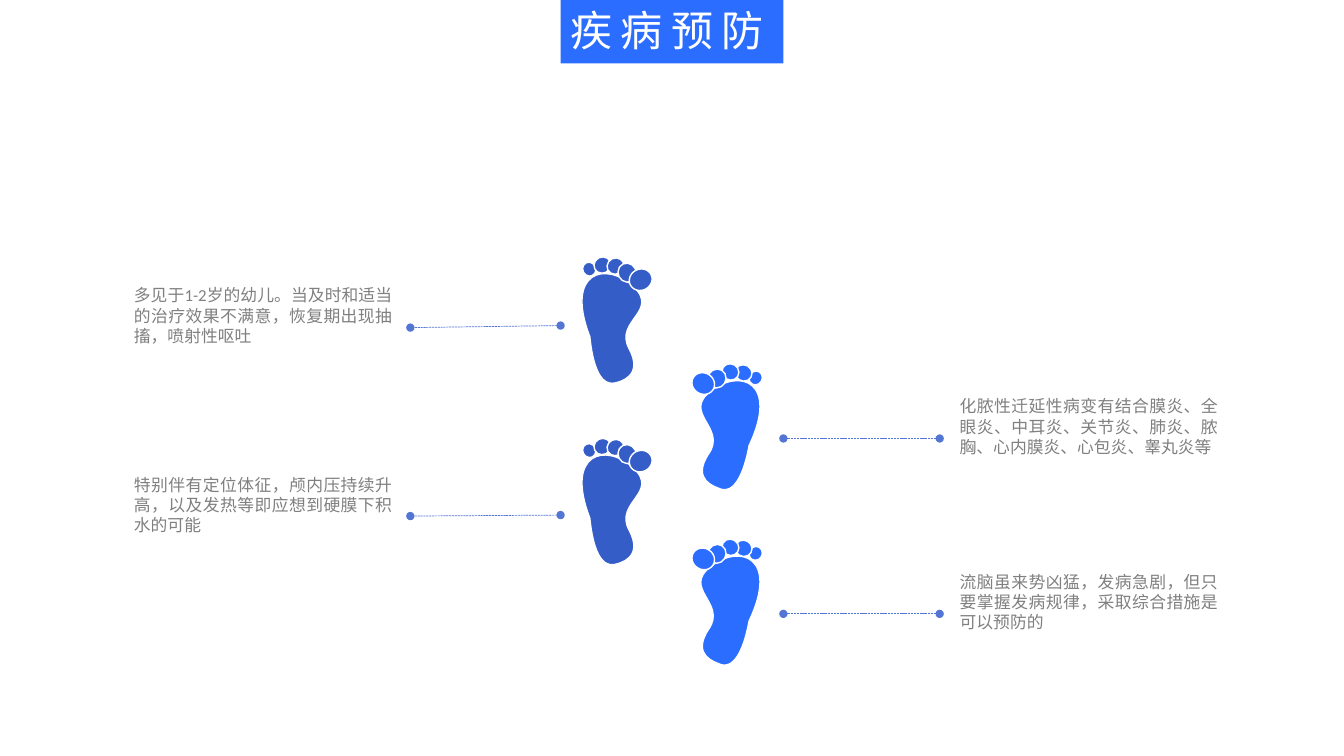
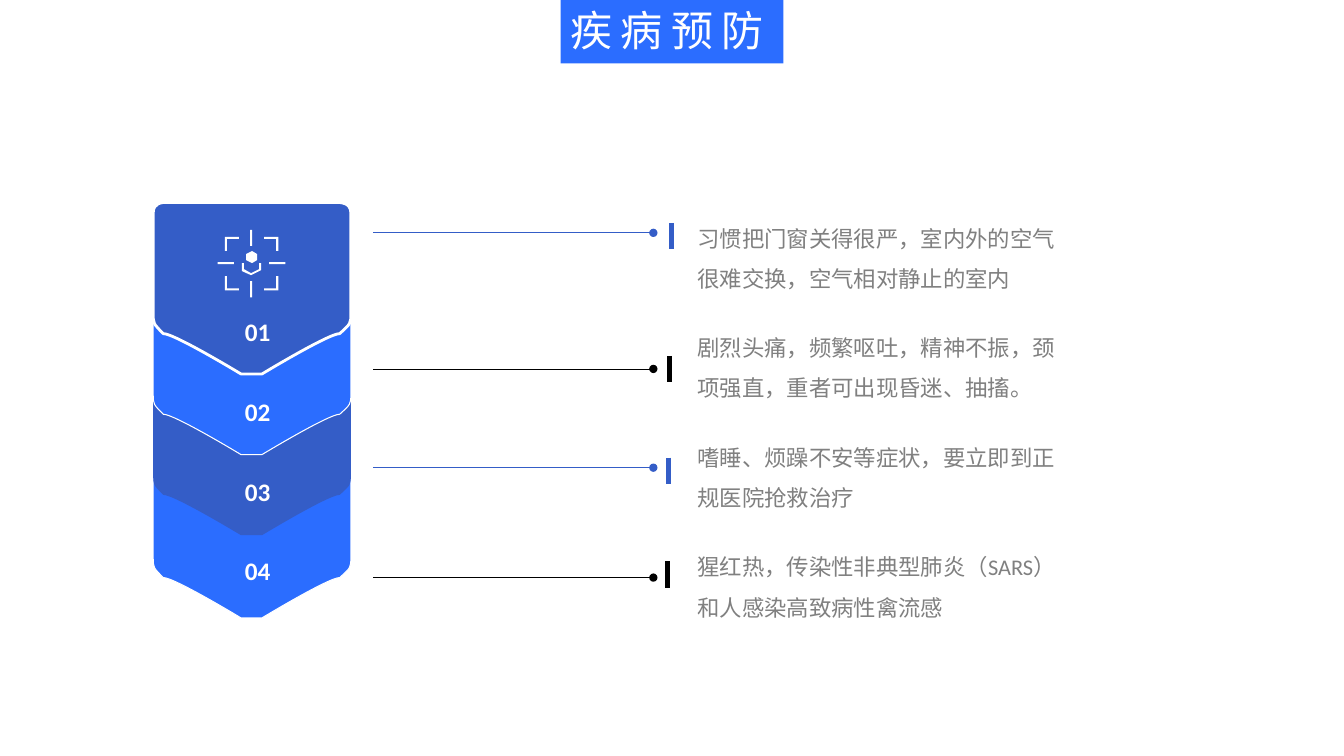
from dataclasses import dataclass
from itertools import product
from math import cos, radians, sin
from typing import Optional

from lxml.etree import SubElement
from pptx import Presentation
from pptx.dml.color import RGBColor
from pptx.enum.dml import MSO_LINE
from pptx.enum.shapes import MSO_CONNECTOR, MSO_SHAPE
from pptx.enum.text import MSO_ANCHOR, MSO_AUTO_SIZE, PP_ALIGN
from pptx.oxml.ns import qn
from pptx.util import Pt

# Shared look: 100 px to the inch
EMU_PER_PX = 9144
PAGE_WIDTH, PAGE_HEIGHT = 1333, 750
FONT = "Calibri"
BRIGHT = RGBColor(0x2B, 0x6D, 0xFF)
DEEP = RGBColor(0x34, 0x5D, 0xC7)
LINK = RGBColor(0x53, 0x76, 0xD5)
GREY = RGBColor(0x80, 0x80, 0x80)
WHITE = RGBColor(0xFF, 0xFF, 0xFF)
BLACK = RGBColor(0x00, 0x00, 0x00)

# An outline is a start point, then points (x, y) or curves (x1, y1, x2, y2, x, y)
Outline = list[tuple[float, ...]]
Frame = tuple[int, int, int, int]


@dataclass(frozen=True)
class Foot:
    sole: Outline
    frame: Frame
    toes: list[tuple[int, int]]
    rotation: float
    color: RGBColor
    step: int


@dataclass(frozen=True)
class Note:
    text: str
    left: int
    top: int
    start: tuple[int, int]
    end: tuple[int, int]


@dataclass(frozen=True)
class Stage:
    text: str
    top: int
    color: RGBColor
    border: float
    number_top: int
    text_top: int
    line_y: int
    bar: tuple[int, int]
    line_color: RGBColor


# Drawing helpers
def px(length: float) -> int:
    return round(length * EMU_PER_PX)


def paint(shape, fill: RGBColor, border: float = 0) -> None:
    shape.shadow.inherit = False
    shape.fill.solid()
    shape.fill.fore_color.rgb = fill
    if border:
        shape.line.color.rgb = WHITE
        shape.line.width = Pt(border)
    else:
        shape.line.fill.background()


def add_preset(page, kind, left: int, top: int, width: int, height: int,
               fill: RGBColor, border: float = 0):
    shape = page.shapes.add_shape(kind, px(left), px(top), px(width), px(height))
    paint(shape, fill, border)
    return shape


def pairs(part: tuple[float, ...]) -> list[tuple[float, float]]:
    return list(zip(part[::2], part[1::2]))


def move(outline: Outline, left: int, top: int) -> Outline:
    return [tuple(n for x, y in pairs(part) for n in (x + left, y + top))
            for part in outline]


def turn(outline: Outline, center: tuple[float, float], degrees: float) -> Outline:
    (cx, cy), angle = center, radians(degrees)
    return [tuple(n for x, y in pairs(part) for n in (
        cx + (x - cx) * cos(angle) - (y - cy) * sin(angle),
        cy + (x - cx) * sin(angle) + (y - cy) * cos(angle))) for part in outline]


def add_outline(page, outline: Outline, fill: RGBColor, border: float = 0,
                frame: Optional[Frame] = None):
    corners = [(px(part[-2]), px(part[-1])) for part in outline]
    builder = page.shapes.build_freeform(*corners[0])
    builder.add_line_segments(corners[1:], close=True)
    shape = builder.convert_to_shape()
    if frame:
        shape.left, shape.top, shape.width, shape.height = map(px, frame)
    # Rewrite the path so that its curves stay curves
    outline_path = next(shape.element.iter(qn("a:path")))
    for child in list(outline_path):
        outline_path.remove(child)
    outline_path.set("w", str(shape.width))
    outline_path.set("h", str(shape.height))
    for index, part in enumerate(outline):
        tag = "moveTo" if index == 0 else "lnTo" if len(part) == 2 else "cubicBezTo"
        command = SubElement(outline_path, qn(f"a:{tag}"))
        for x, y in pairs(part):
            SubElement(command, qn("a:pt"), x=str(px(x) - shape.left),
                       y=str(px(y) - shape.top))
    SubElement(outline_path, qn("a:close"))
    paint(shape, fill, border)
    return shape


def add_line(page, start: tuple[int, int], end: tuple[int, int], color: RGBColor,
             width: float, dash: Optional[MSO_LINE] = None,
             dots: tuple[str, ...] = ()) -> None:
    connector = page.shapes.add_connector(
        MSO_CONNECTOR.STRAIGHT, *map(px, (*start, *end)))
    connector.line.color.rgb = color
    connector.line.width = Pt(width)
    if dash:
        connector.line.dash_style = dash
    properties = connector.element.spPr
    for dot in dots:
        SubElement(properties.find(qn("a:ln")), qn(f"a:{dot}"), type="oval")
    SubElement(properties, qn("a:effectLst"))


def write(shape, text: str, *, size: float, color: RGBColor, bold: bool = False,
          align: PP_ALIGN = PP_ALIGN.LEFT, line_spacing: float = 1,
          tracking: float = 0, wrap: bool = True) -> None:
    frame = shape.text_frame
    frame.word_wrap = wrap
    para = frame.paragraphs[0]
    para.alignment = align
    para.line_spacing = line_spacing
    span = para.add_run()
    span.text = text
    span.font.name = FONT
    span.font.size = Pt(size)
    span.font.bold = bold
    span.font.color.rgb = color
    if tracking:
        span.font._element.set("spc", str(round(tracking * 100)))


def add_text(page, text: str, left: int, top: int, width: int, height: int,
             **text_format) -> None:
    box = page.shapes.add_textbox(px(left), px(top), px(width), px(height))
    box.text_frame.auto_size = MSO_AUTO_SIZE.SHAPE_TO_FIT_TEXT
    write(box, text, **text_format)


def add_page(deck):
    return deck.slides.add_slide(deck.slide_layouts[6])


def add_title(page, text: str) -> None:
    band = add_preset(page, MSO_SHAPE.RECTANGLE, 556, 0, 221, 63, BRIGHT)
    band.text_frame.vertical_anchor = MSO_ANCHOR.TOP
    write(band, text, size=30, color=WHITE, align=PP_ALIGN.JUSTIFY,
          tracking=6, wrap=False)


# Footprints page
TITLE = "疾病预防"
TOE_SIZES = [(13, 14), (17, 16), (17, 16), (18, 19), (23, 21)]
FEET = [
    Foot([(585, 334), (560, 269, 601, 259, 628, 284), (655, 309, 609, 318, 624, 346),
          (639, 374, 614, 379, 610, 380), (605, 381, 590, 383, 585, 334)],
         (574, 270, 71, 106),
         [(578, 260), (589, 255), (602, 256), (613, 261), (624, 267)],
         333.6, DEEP, 180),
    Foot([(743, 442), (773, 379, 734, 365, 705, 388), (676, 410, 721, 424, 703, 450),
          (685, 477, 710, 483, 714, 485), (719, 487, 734, 490, 743, 442)],
         (684, 375, 71, 106),
         [(743, 368), (729, 362), (716, 361), (702, 366), (686, 370)],
         31.5, BRIGHT, 174),
]
NOTES = [
    Note("多见于1-2岁的幼儿。当及时和适当的治疗效果不满意，恢复期出现抽搐，喷射性呕吐",
         123, 278, (556, 323), (407, 325)),
    Note("特别伴有定位体征，颅内压持续升高，以及发热等即应想到硬膜下积水的可能",
         123, 466, (556, 511), (407, 512)),
    Note("化脓性迁延性病变有结合膜炎、全眼炎、中耳炎、关节炎、肺炎、脓胸、心内膜炎、心包炎、睾丸炎等",
         942, 388, (932, 435), (777, 435)),
    Note("流脑虽来势凶猛，发病急剧，但只要掌握发病规律，采取综合措施是可以预防的",
         942, 562, (932, 609), (777, 609)),
]


def add_foot(page, foot: Foot, drop: int) -> None:
    group = page.shapes.add_group_shape()
    left, top, width, height = foot.frame
    upright = turn(foot.sole, (left + width / 2, top + height / 2), -foot.rotation)
    sole = add_outline(group, move(upright, 0, drop), foot.color, 1,
                       (left, top + drop, width, height))
    sole.rotation = foot.rotation
    for (toe_left, toe_top), size in zip(foot.toes, TOE_SIZES):
        toe = add_preset(group, MSO_SHAPE.OVAL, toe_left, toe_top + drop, *size,
                         foot.color, 1)
        toe.rotation = foot.rotation


def build_footprints(deck) -> None:
    page = add_page(deck)
    for foot, count in product(FEET, range(2)):
        add_foot(page, foot, count * foot.step)
    for note in NOTES:
        add_line(page, note.start, note.end, LINK, 0.5, MSO_LINE.SQUARE_DOT,
                 ("headEnd", "tailEnd"))
        add_text(page, note.text, note.left, note.top, 276, 71,
                 size=12, color=GREY, align=PP_ALIGN.JUSTIFY)
    add_title(page, TITLE)


# Stages page
CHEVRON_LEFT = 152
CHEVRON = [
    (185, 0), (185, 0, 196, 0, 196, 10), (196, 10, 196, 100, 196, 110),
    (196, 120, 196, 120, 185, 130), (174, 130, 108, 170, 108, 170),
    (97, 170, 97, 170, 87, 170), (87, 170, 21, 130, 10, 130),
    (0, 120, 0, 120, 0, 110), (0, 100, 0, 10, 0, 10), (0, 0, 10, 0, 10, 0),
]
STAGES = [
    Stage("习惯把门窗关得很严，室内外的空气很难交换，空气相对静止的室内",
          201, DEEP, 2, 300, 205, 231, (666, 221), DEEP),
    Stage("剧烈头痛，频繁呕吐，精神不振，颈项强直，重者可出现昏迷、抽搐。",
          281, BRIGHT, 0.75, 379, 313, 366, (664, 353), BLACK),
    Stage("嗜睡、烦躁不安等症状，要立即到正规医院抢救治疗",
          361, DEEP, 0, 459, 422, 464, (663, 454), DEEP),
    Stage("猩红热，传染性非典型肺炎（SARS）和人感染高致病性禽流感",
          443, BRIGHT, 0.75, 537, 531, 573, (662, 557), BLACK),
]
BRACKET = [(0, 0), (14, 0), (14, 2), (2, 2), (2, 14), (0, 14)]
TICKS = [(216, 260, 16, 2), (267, 260, 16, 2), (248, 279, 2, 16), (248, 228, 2, 16)]
HEXAGON = [(250, 249), (244, 252), (244, 258), (250, 261), (255, 258), (255, 252)]
CUP = [(240, 261), (240, 269), (249, 273), (259, 268), (259, 261), (257, 261),
       (257, 267), (249, 271), (242, 267), (242, 261)]


def add_focus_icon(page) -> None:
    group = page.shapes.add_group_shape()
    for (x, across), (y, down) in product([(223, 1), (276, -1)], [(235, 1), (288, -1)]):
        add_outline(group, [(x + across * dx, y + down * dy) for dx, dy in BRACKET], WHITE)
    for tick in TICKS:
        add_preset(group, MSO_SHAPE.RECTANGLE, *tick, WHITE)
    for outline in (HEXAGON, CUP):
        add_outline(group, outline, WHITE)


def build_stages(deck) -> None:
    page = add_page(deck)
    # Each chevron overlaps the one below it
    for stage in reversed(STAGES):
        add_outline(page, move(CHEVRON, CHEVRON_LEFT, stage.top), stage.color, stage.border)
    for number, stage in enumerate(STAGES, start=1):
        add_text(page, f"{number:02}", 194, stage.number_top, 123, 47, size=18,
                 color=WHITE, bold=True, align=PP_ALIGN.CENTER, line_spacing=1.3)
    add_focus_icon(page)
    for stage in STAGES:
        add_line(page, (648, stage.line_y), (370, stage.line_y), stage.line_color, 0.5,
                 dots=("headEnd",))
        bar_x, bar_y = stage.bar
        add_line(page, stage.bar, (bar_x, bar_y + 26), stage.line_color, 3)
        add_text(page, stage.text, 682, stage.text_top, 389, 88,
                 size=16, color=GREY, line_spacing=1.5)
    add_title(page, TITLE)


def main() -> None:
    deck = Presentation()
    deck.slide_width, deck.slide_height = px(PAGE_WIDTH), px(PAGE_HEIGHT)
    build_footprints(deck)
    build_stages(deck)
    deck.save("out.pptx")


if __name__ == "__main__":
    main()
